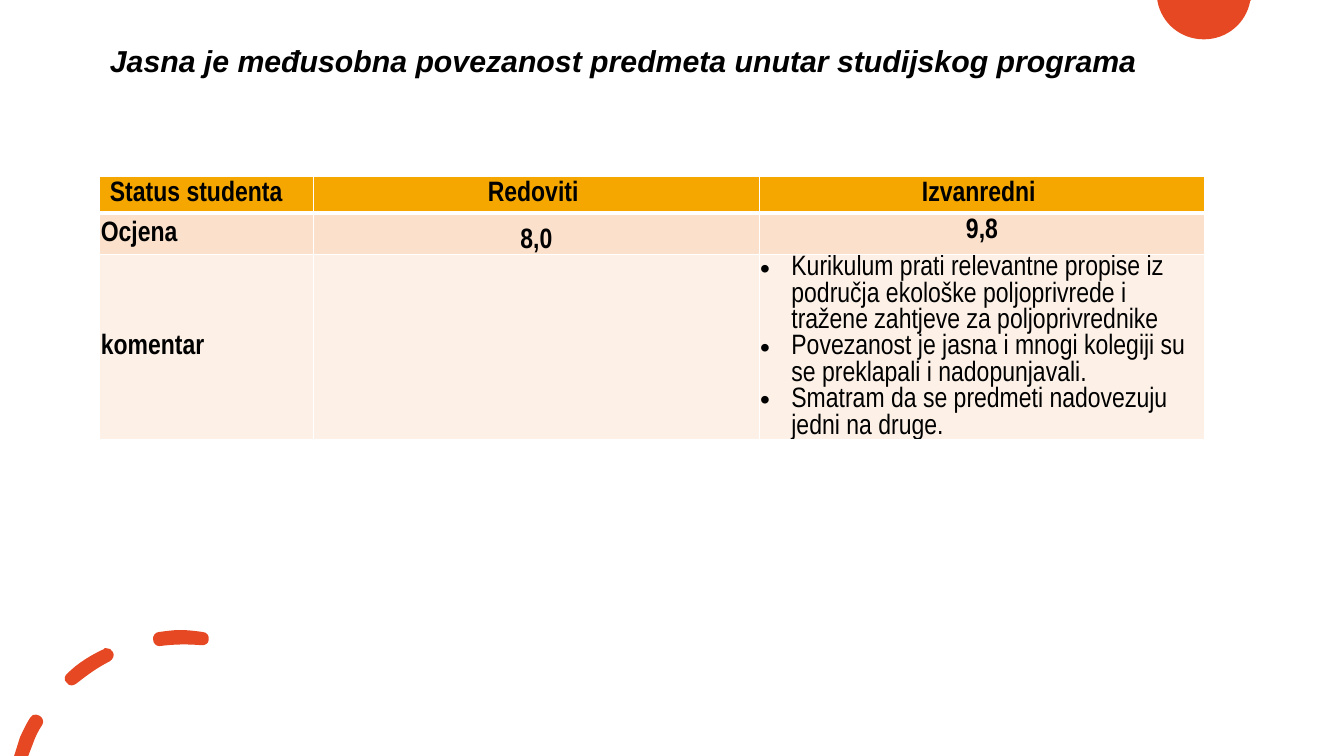
from lxml import etree
from pptx import Presentation
from pptx import util as u
from pptx.dml.color import RGBColor
from pptx.enum import text
from pptx.oxml.ns import qn

ORANGE, BLACK, WHITE = "E64823", "000000", "FFFFFF"
LEFT, CENTER = text.PP_ALIGN.LEFT, text.PP_ALIGN.CENTER
TOP, MIDDLE, BOTTOM = text.MSO_ANCHOR.TOP, text.MSO_ANCHOR.MIDDLE, text.MSO_ANCHOR.BOTTOM


def paint(fill, color):
    fill.solid()
    fill.fore_color.rgb = RGBColor.from_string(color)


def write(paragraph, words, font, size, bold, italic=False):
    run = paragraph.add_run()
    run.text = words
    run.font.name, run.font.size = font, u.Pt(size)
    run.font.bold, run.font.italic = bold, italic
    paint(run.font.fill, BLACK)


deck = Presentation()
deck.slide_width, deck.slide_height = u.Inches(13.33), u.Inches(7.5)
slide = deck.slides.add_slide(deck.slide_layouts[5])
paint(slide.background.fill, WHITE)

# Corner ornaments: each contour is a start point, then lines (2 numbers) or curves (6)
sun = [[(11.48, 0), (12.41, 0), (12.4, 0.01), (12.36, 0.23, 12.17, 0.39, 11.94, 0.39),
        (11.71, 0.39, 11.52, 0.23, 11.48, 0.01)]]
dashed_arc = [
    [(0.36, 7.09), (0.34, 7.08, 0.31, 7.1, 0.3, 7.12), (0.26, 7.18, 0.23, 7.25, 0.2, 7.31),
     (0.14, 7.5), (0.28, 7.5), (0.33, 7.37), (0.35, 7.31, 0.38, 7.25, 0.42, 7.19),
     (0.44, 7.16, 0.42, 7.11, 0.39, 7.1), (0.38, 7.09, 0.37, 7.09, 0.36, 7.09)],
    [(1.05, 6.43), (1.04, 6.43, 1.03, 6.43, 1.03, 6.44), (0.9, 6.5, 0.77, 6.58, 0.67, 6.68),
     (0.64, 6.7, 0.63, 6.75, 0.66, 6.77), (0.67, 6.79, 0.69, 6.8, 0.71, 6.8),
     (0.73, 6.8, 0.74, 6.79, 0.76, 6.78), (0.86, 6.7, 0.97, 6.62, 1.09, 6.56),
     (1.12, 6.54, 1.14, 6.5, 1.12, 6.47), (1.11, 6.44, 1.08, 6.43, 1.05, 6.43)],
    [(1.79, 6.25), (1.72, 6.25, 1.65, 6.26, 1.58, 6.27), (1.54, 6.27, 1.51, 6.31, 1.52, 6.35),
     (1.52, 6.38, 1.55, 6.41, 1.58, 6.41), (1.73, 6.39, 1.86, 6.39, 1.99, 6.4),
     (2.03, 6.41, 2.07, 6.38, 2.07, 6.35), (2.08, 6.31, 2.05, 6.27, 2.01, 6.27),
     (1.94, 6.26, 1.86, 6.25, 1.79, 6.25)],
]
UNITS = 1000  # per inch
for ornament in (sun, dashed_arc):
    builder = None
    for contour in ornament:
        points = [(segment[i] * UNITS, segment[i + 1] * UNITS)
                  for segment in contour for i in range(0, len(segment), 2)]
        if builder is None:
            builder = slide.shapes.build_freeform(*points[0], scale=u.Inches(1) / UNITS)
        else:
            builder.move_to(*points[0])
        builder.add_line_segments(points[1:], close=True)
    outline = builder.convert_to_shape()
    outline.shadow.inherit = False
    paint(outline.fill, ORANGE)
    outline.line.fill.background()

    # Three points in a row become one curve
    strokes = iter(list(outline._element.iter(qn("a:lnTo"))))
    for segment in (part for contour in ornament for part in contour[1:]):
        stroke = next(strokes)
        if len(segment) == 6:
            stroke.tag = qn("a:cubicBezTo")
            for extra in (next(strokes), next(strokes)):
                stroke.append(extra[0])
                extra.getparent().remove(extra)

# Title
title = slide.shapes.title
title.left, title.top = u.Inches(0.99), u.Inches(0.22)
title.width, title.height = u.Inches(11.5), u.Inches(0.81)
title.text_frame.auto_size = text.MSO_AUTO_SIZE.NONE
title.text_frame.vertical_anchor = MIDDLE
heading = title.text_frame.paragraphs[0]
heading.alignment, heading.line_spacing = LEFT, 0.9
write(heading, "Jasna je međusobna povezanost predmeta unutar studijskog programa",
      "Arial", 21.6, True, True)

# Ratings by student status: each cell is lines, alignment, anchor, tight margins
comments = [
    "Kurikulum prati relevantne propise iz područja ekološke poljoprivrede i "
    "tražene zahtjeve za poljoprivrednike",
    "Povezanost je jasna i mnogi kolegiji su se preklapali i nadopunjavali.",
    "Smatram da se predmeti nadovezuju jedni na druge.",
]
ratings = [
    (0.36, "F5A700", [(["Status studenta"], LEFT, MIDDLE, False),
                      (["Redoviti "], CENTER, MIDDLE, False),
                      (["Izvanredni "], CENTER, MIDDLE, False)]),
    (0.41, "FBE1CC", [(["Ocjena"], LEFT, MIDDLE, True),
                      (["8,0"], CENTER, BOTTOM, True),
                      (["9,8"], CENTER, TOP, False)]),
    (1.84, "FDF1E7", [(["komentar"], LEFT, MIDDLE, True),
                      ([], LEFT, TOP, False),
                      (comments, LEFT, TOP, True)]),
]
table = slide.shapes.add_table(3, 3, u.Inches(0.99), u.Inches(1.75),
                               u.Inches(10.96), u.Inches(2.61)).table
for column, width in zip(table.columns, (2.12, 4.42, 4.42)):
    column.width = u.Inches(width)
for row_index, (height, shade, entries) in enumerate(ratings):
    table.rows[row_index].height = u.Inches(height)
    for column_index, (lines, alignment, anchor, tight) in enumerate(entries):
        cell = table.cell(row_index, column_index)
        cell.vertical_anchor = anchor
        if tight:
            cell.margin_left = cell.margin_right = cell.margin_top = u.Inches(0.01)
            cell.margin_bottom = 0

        # White borders, heavier on both sides of the header's lower edge
        properties = cell._tc.get_or_add_tcPr()
        for side in "LRTB":
            heavy = (row_index, side) in ((0, "B"), (1, "T"))
            border = etree.SubElement(properties, qn("a:ln" + side),
                                      w=str(u.Pt(3 if heavy else 1)))
            border_fill = etree.SubElement(border, qn("a:solidFill"))
            etree.SubElement(border_fill, qn("a:srgbClr"), val=WHITE)
        paint(cell.fill, shade)

        for line_index, line in enumerate(lines):
            frame = cell.text_frame
            paragraph = frame.add_paragraph() if line_index else frame.paragraphs[0]
            paragraph.alignment = alignment
            bulleted = lines is comments
            if bulleted:
                bullet = paragraph._p.get_or_add_pPr()
                bullet.set("marL", str(u.Inches(0.31)))
                bullet.set("indent", str(u.Inches(-0.31)))
                etree.SubElement(bullet, qn("a:buFont"), typeface="Arial")
                etree.SubElement(bullet, qn("a:buChar"), char="•")
            write(paragraph, line, "Arial Narrow", 20, not bulleted)

deck.save("out.pptx")
